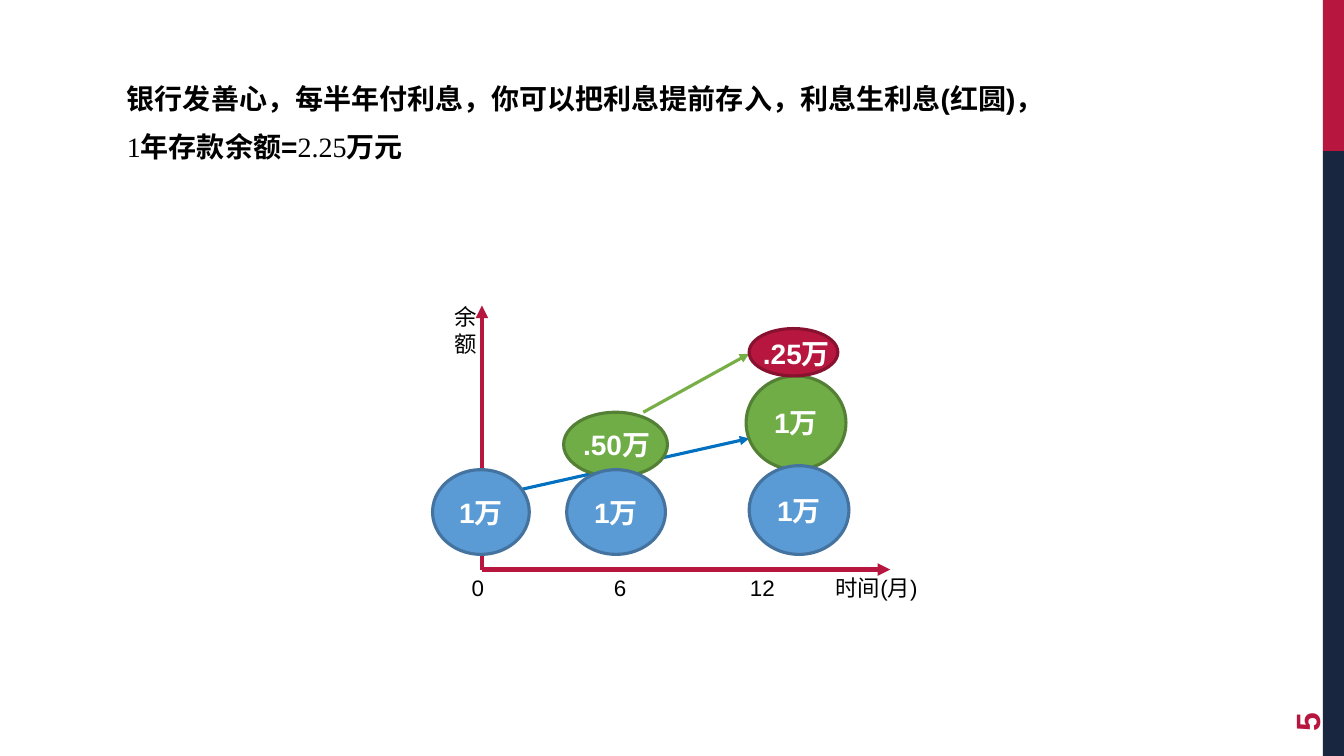
import pptx
import pptx.util
import pptx.dml.color
import pptx.enum.shapes
import pptx.enum.text
import pptx.oxml
import pptx.oxml.ns
import lxml.etree

Inches = pptx.util.Inches
Pt = pptx.util.Pt
RGBColor = pptx.dml.color.RGBColor
MSO_SHAPE = pptx.enum.shapes.MSO_SHAPE
PP_ALIGN = pptx.enum.text.PP_ALIGN
MSO_ANCHOR = pptx.enum.text.MSO_ANCHOR
qn = pptx.oxml.ns.qn

CRIMSON = RGBColor(0xB7, 0x17, 0x3E)
DARK_CRIMSON = RGBColor(0x87, 0x11, 0x2E)
NAVY = RGBColor(0x19, 0x26, 0x40)
GREEN = RGBColor(0x70, 0xAD, 0x47)
DARK_GREEN = RGBColor(0x53, 0x80, 0x35)
ARROW_GREEN = RGBColor(0x78, 0xAE, 0x46)
BLUE = RGBColor(0x5B, 0x9B, 0xD5)
DARK_BLUE = RGBColor(0x43, 0x73, 0x9E)
ARROW_BLUE = RGBColor(0x00, 0x70, 0xC0)
BLACK = RGBColor(0, 0, 0)
WHITE = RGBColor(255, 255, 255)


def style(p, size, color, bold=False, align=None):
    p.font.name = "Arial"
    p.font.size = Pt(size)
    p.font.bold = bold
    p.font.color.rgb = color
    p.alignment = align


def add_text(shapes, box, text, size, color, bold=False, align=None):
    tb = shapes.add_textbox(*map(Inches, box))
    tb.text_frame.word_wrap = True
    p = tb.text_frame.paragraphs[0]
    p.add_run().text = text
    style(p, size, color, bold, align)
    return tb


def add_arrow(shapes, start, end, color, width):
    line = shapes.add_connector(
        pptx.enum.shapes.MSO_CONNECTOR.STRAIGHT, *map(Inches, start + end))
    line.line.color.rgb = color
    line.line.width = Pt(width)
    ln = line.line._get_or_add_ln()
    lxml.etree.SubElement(ln, qn("a:tailEnd"), type="triangle")
    lxml.etree.SubElement(line._element.spPr, qn("a:effectLst"))


def add_ellipse(shapes, box, fill, border, text=""):
    sp = shapes.add_shape(MSO_SHAPE.OVAL, *map(Inches, box))
    sp.shadow.inherit = False
    sp.fill.solid()
    sp.fill.fore_color.rgb = fill
    sp.line.color.rgb = border
    sp.line.width = Pt(2.25)
    if text:
        tf = sp.text_frame
        tf.word_wrap = True
        tf.vertical_anchor = MSO_ANCHOR.MIDDLE
        tf.paragraphs[0].text = text
        style(tf.paragraphs[0], 20, WHITE, True, PP_ALIGN.CENTER)


def add_interest(shapes, box, text_box, fill, border, text):
    group = shapes.add_group_shape()
    add_ellipse(group.shapes, box, fill, border)
    add_text(group.shapes, text_box, text, 20, WHITE, True, PP_ALIGN.CENTER)


def add_sidebar(s, left, top, width, height):
    split = height / 5
    for y, h, color in ((top, split, CRIMSON), (top + split, height - split, NAVY)):
        sp = s.shapes.add_shape(MSO_SHAPE.RECTANGLE, *map(Inches, (left, y, width, h)))
        sp.shadow.inherit = False
        sp.fill.solid()
        sp.fill.fore_color.rgb = color
        sp.line.fill.background()
    number = add_text(s.shapes, (left - 0.88, top + 6.37, 1.44, 0.53), "5", 24, CRIMSON, True)
    number.text_frame.vertical_anchor = MSO_ANCHOR.MIDDLE
    number.rotation = 270


def add_statement(s, left, top, width, height):
    tb = s.shapes.add_textbox(*map(Inches, (left, top, width, height)))
    tf = tb.text_frame
    tf.word_wrap = True
    lines = (
        (("银行发善心，每半年付利息，你可以把利息提前存入，利息生利息(红圆)，", True),),
        (("1", False), ("年存款余额=", True), ("2.25", False), ("万元", True)),
    )
    for i, runs in enumerate(lines):
        p = tf.add_paragraph() if i else tf.paragraphs[0]
        style(p, 20, BLACK)
        p.space_before = Pt(4)
        p.space_after = Pt(6)
        pPr = p._p.get_or_add_pPr()
        pPr.set("marL", "0")
        pPr.set("indent", str(Inches(0.49)))
        for text, bold in runs:
            r = p.add_run()
            r.text = text
            r.font.name = "Arial" if bold else "Times New Roman"
            r.font.size = Pt(20)
            r.font.bold = bold
            r.font.color.rgb = BLACK


def add_time_labels(shapes, box):
    tb = add_text(shapes, box, "0\t6\t12\t时间(月)", 16, BLACK)
    pPr = tb.text_frame.paragraphs[0]._p.get_or_add_pPr()
    tabs = pptx.oxml.parse_xml(
        '<a:tabLst xmlns:a="http://schemas.openxmlformats.org/drawingml/2006/main"/>')
    for pos in (1.41, 2.76, 3.61):
        lxml.etree.SubElement(tabs, qn("a:tab"), pos=str(Inches(pos)), algn="l")
    pPr.insert(0, tabs)


def add_balance_chart(s, left, top, width, height):
    shapes = s.shapes

    def at(x, y, w, h):
        return left + x, top + y, w, h

    def point(x, y):
        return left + x, top + y

    origin = point(0.49, 2.69)
    add_arrow(shapes, point(0.68, 1.94), point(3.14, 1.39), ARROW_BLUE, 2.25)
    add_arrow(shapes, point(2.09, 1.13), point(3.14, 0.55), ARROW_GREEN, 2.25)
    add_ellipse(shapes, at(3.11, 0.77, 0.99, 0.93), GREEN, DARK_GREEN, "1万")
    add_time_labels(shapes, at(0.29, 2.69, width - 0.29, 0.37))
    add_arrow(shapes, origin, point(4.54, 2.69), CRIMSON, 3)
    add_ellipse(shapes, at(3.14, 1.66, 0.99, 0.88), BLUE, DARK_BLUE, "1万")
    add_interest(shapes, at(3.14, 0.3, 0.88, 0.47), at(3.14, 0.33, 0.94, 0.44),
                 CRIMSON, DARK_CRIMSON, ".25万")
    add_interest(shapes, at(1.3, 1.13, 1.03, 0.64), at(1.32, 1.23, 1.01, 0.44),
                 GREEN, DARK_GREEN, ".50万")
    add_arrow(shapes, origin, point(0.49, 0.07), CRIMSON, 3)
    add_ellipse(shapes, at(0, 1.7, 0.96, 0.84), BLUE, DARK_BLUE, "1万")
    add_text(shapes, at(0.12, 0, 0.27, 0.64), "余额", 16, BLACK, align=PP_ALIGN.CENTER)
    add_ellipse(shapes, at(1.33, 1.7, 0.98, 0.84), BLUE, DARK_BLUE, "1万")


def main():
    prs = pptx.Presentation()
    prs.slide_width = Inches(13.33)
    prs.slide_height = Inches(7.5)
    s = prs.slides.add_slide(prs.slide_layouts[6])
    add_sidebar(s, 13.12, 0, 0.21, 7.5)
    add_statement(s, 0.67, 0.76, 12.02, 1.68)
    add_balance_chart(s, 4.29, 2.96, 5.46, 3.06)
    prs.save("out.pptx")


if __name__ == "__main__":
    main()
